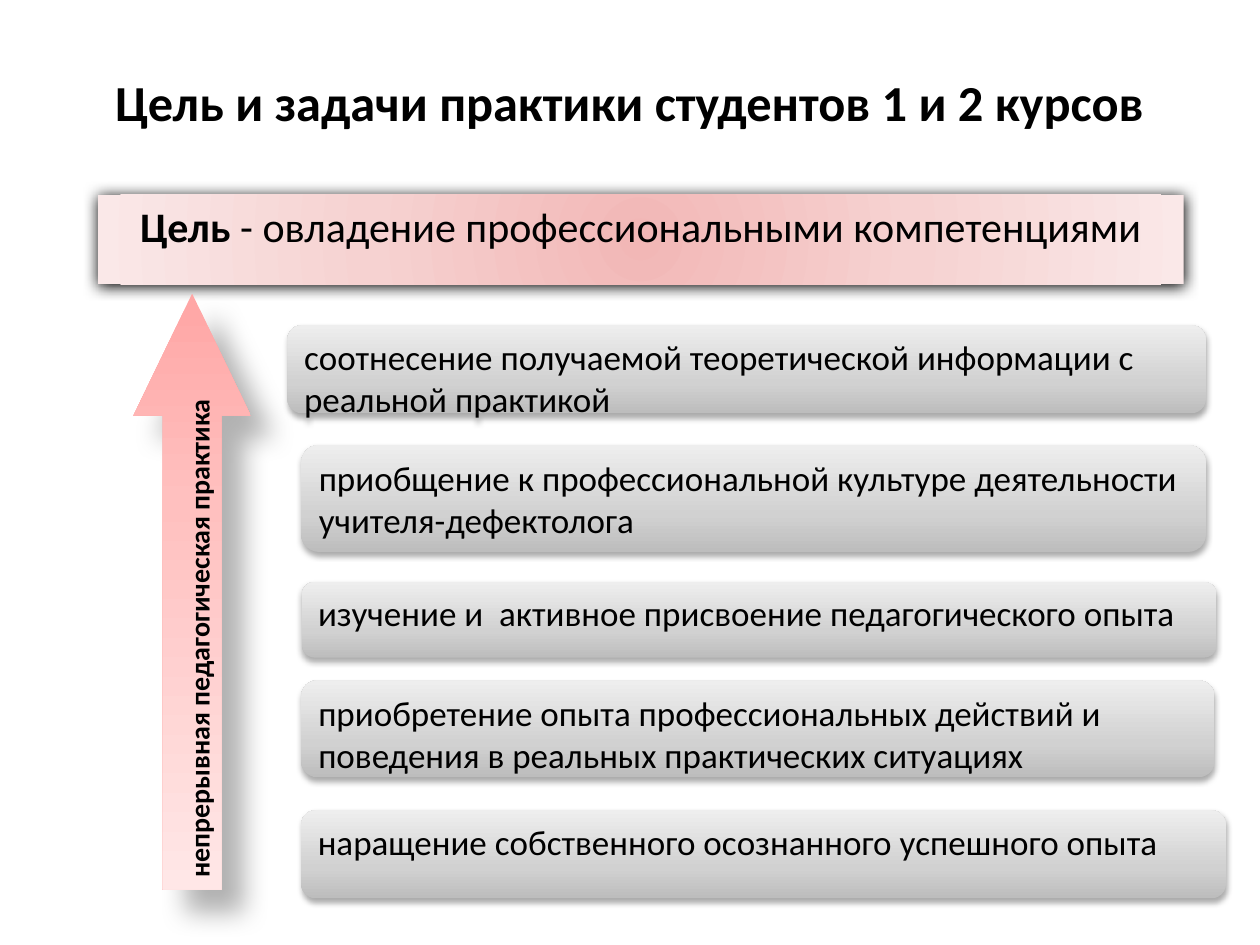
from dataclasses import dataclass

from lxml import etree
from pptx import Presentation
from pptx import util as u
from pptx.dml import color
from pptx.enum import shapes, text
from pptx.oxml import ns


@dataclass(frozen=True)
class Theme:
    font: str = "Calibri"
    ink: str = "000000"
    title_size: float = 28.8
    goal_size: float = 24
    task_size: float = 20
    arrow_size: float = 16
    # Gradient stops: position in percent, colour
    goal_stops: tuple = ((0, "F2B7B6"), (50, "F6D2D1"), (100, "FAE8E8"))
    arrow_stops: tuple = ((0, "FFA6A5"), (35, "FFC0BF"), (100, "FFE7E7"))
    task_stops: tuple = ((0, "BDBDBD"), (35, "D1D1D1"), (100, "EEEEEE"))
    # Shadows: opacity in percent, blur, distance, direction in degrees
    goal_shadow: tuple = (100, 8.5, 1, 90)
    arrow_shadow: tuple = (30, 15, 18, 45)
    task_shadow: tuple = (32, 3.5, 2.2, 90)


THEME = Theme()

# Left, top, width, height, wording
TASKS = (
    (164.2, 185.8, 524.9, 50.4, "соотнесение получаемой теоретической информации с реальной практикой"),
    (172.1, 254.2, 517, 61.2, "приобщение к профессиональной культуре деятельности учителя-дефектолога"),
    (172.6, 332.6, 522.7, 43.2, "изучение и  активное присвоение педагогического опыта"),
    (172.1, 388.8, 522, 55.4, "приобретение опыта профессиональных действий и поведения в реальных практических ситуациях"),
    (172.1, 463, 528.5, 50.4, "наращение собственного осознанного успешного опыта"),
)


def add_node(parent, tag, **attributes):
    values = {name: str(value) for name, value in attributes.items()}
    return etree.SubElement(parent, ns.qn(tag), values)


def set_gradient(shape, stops, angle=None):
    """Fill along the angle, or outwards from the centre when there is none."""
    shape.fill.background()
    no_fill = shape._element.spPr.find(ns.qn("a:noFill"))
    gradient = etree.Element(ns.qn("a:gradFill"), rotWithShape="1")
    stop_list = add_node(gradient, "a:gsLst")
    for position, rgb in stops:
        stop = add_node(stop_list, "a:gs", pos=position * 1000)
        add_node(stop, "a:srgbClr", val=rgb)
    if angle is None:
        centre = add_node(gradient, "a:path", path="circle")
        add_node(centre, "a:fillToRect", l=50000, t=50000, r=50000, b=50000)
    else:
        add_node(gradient, "a:lin", ang=angle * 60000, scaled=0)
    no_fill.getparent().replace(no_fill, gradient)


def set_shadow(shape, opacity, blur, distance, direction):
    shape.shadow.inherit = False
    effects = shape._element.spPr.find(ns.qn("a:effectLst"))
    shadow = add_node(effects, "a:outerShdw", blurRad=int(u.Pt(blur)), dist=int(u.Pt(distance)),
                      dir=direction * 60000, algn="ctr", rotWithShape=0)
    tint = add_node(shadow, "a:srgbClr", val=THEME.ink)
    add_node(tint, "a:alpha", val=opacity * 1000)


def write(shape, runs, size, align=text.PP_ALIGN.LEFT, anchor=text.MSO_ANCHOR.TOP):
    """Write one paragraph from (wording, bold) runs."""
    frame = shape.text_frame
    frame.word_wrap = True
    frame.vertical_anchor = anchor
    paragraph = frame.paragraphs[0]
    paragraph.alignment = align
    for wording, bold in runs:
        run = paragraph.add_run()
        run.text = wording
        run.font.name = THEME.font
        run.font.size = u.Pt(size)
        run.font.bold = bold
        run.font.color.rgb = color.RGBColor.from_string(THEME.ink)


def add_block(slide, kind, box, stops, angle, shadow):
    block = slide.shapes.add_shape(kind, *map(u.Pt, box))
    block.line.fill.background()
    set_gradient(block, stops, angle)
    set_shadow(block, *shadow)
    return block


def add_title(slide):
    title = slide.shapes.add_textbox(*map(u.Pt, (36, 21.6, 648, 72.7)))
    write(title, [("Цель и задачи практики студентов 1 и 2 курсов", True)], THEME.title_size,
          text.PP_ALIGN.CENTER, text.MSO_ANCHOR.MIDDLE)


def add_goal(slide):
    goal = add_block(slide, shapes.MSO_SHAPE.FLOWCHART_PROCESS, (55.8, 111.2, 620.6, 51.1),
                     THEME.goal_stops, None, THEME.goal_shadow)
    write(goal, [("Цель", True), (" - овладение профессиональными компетенциями", False)],
          THEME.goal_size, text.PP_ALIGN.CENTER)


def add_practice_arrow(slide):
    arrow = add_block(slide, shapes.MSO_SHAPE.UP_ARROW, (76.3, 167.8, 67, 340.6),
                      THEME.arrow_stops, 90, THEME.arrow_shadow)
    arrow.adjustments[0] = 0.5
    arrow.adjustments[1] = 1.04
    write(arrow, [("непрерывная педагогическая практика", True)], THEME.arrow_size,
          anchor=text.MSO_ANCHOR.BOTTOM)
    frame = arrow.text_frame
    frame.margin_left = frame.margin_right = u.Pt(3.6)
    frame.margin_top = frame.margin_bottom = u.Pt(3.6)
    frame._txBody.bodyPr.set("vert", "vert270")


def add_task(slide, box, wording):
    task = add_block(slide, shapes.MSO_SHAPE.FLOWCHART_ALTERNATE_PROCESS, box,
                     THEME.task_stops, 270, THEME.task_shadow)
    write(task, [(wording, False)], THEME.task_size)


def main():
    deck = Presentation()
    deck.slide_width, deck.slide_height = u.Pt(720), u.Pt(540)
    slide = deck.slides.add_slide(deck.slide_layouts[6])
    add_title(slide)
    add_goal(slide)
    add_practice_arrow(slide)
    for *box, wording in TASKS:
        add_task(slide, box, wording)
    deck.save("out.pptx")


if __name__ == "__main__":
    main()
